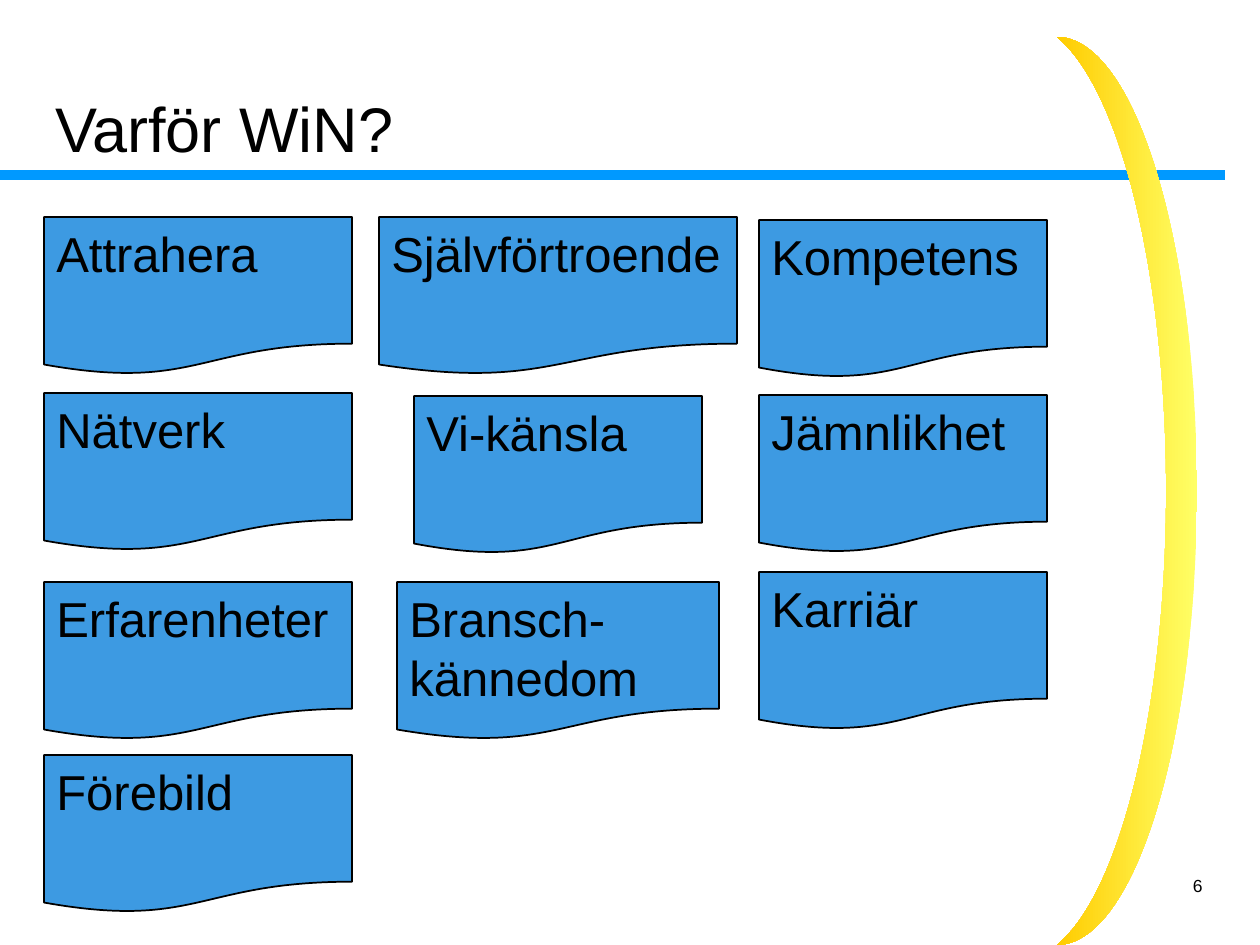
from pptx import Presentation
from pptx import util as u
from pptx.dml.color import RGBColor
from pptx.enum import shapes, text
from pptx.oxml import ns, xmlchemy

BLACK = RGBColor(0x00, 0x00, 0x00)
RULE_BLUE = RGBColor(0x00, 0x99, 0xFF)
BOX_BLUE = RGBColor(0x3D, 0x9A, 0xE2)
YELLOW = RGBColor(0xFF, 0xFF, 0x66)
GOLD = RGBColor(0xFF, 0xCC, 0x00)

PX_PER_INCH = 126
BOX_HEIGHT = 158

COLUMNS = [
    (198, [("Attrahera", 217, 308), ("Nätverk", 393, 308),
           ("Erfarenheter", 582, 308), ("Förebild", 755, 308)]),
    (558, [("Självförtroende", 217, 358), ("Vi-känsla", 396, 288),
           ("Bransch-\vkännedom", 582, 322)]),
    (903, [("Kompetens", 220, 288), ("Jämnlikhet", 395, 288),
           ("Karriär", 572, 288)]),
]


def px(*lengths):
    """Convert pixel lengths to EMU."""
    return [u.Inches(length / PX_PER_INCH) for length in lengths]


def write(frame, words, size, align=text.PP_ALIGN.LEFT):
    """Fill a text frame with one uniformly formatted paragraph."""
    frame.text = words
    paragraph = frame.paragraphs[0]
    paragraph.alignment = align
    paragraph.font.size = u.Pt(size)
    paragraph.font.name = "Arial"
    paragraph.font.color.rgb = BLACK
    return paragraph


def add_rule(slide):
    """Draw the blue rule under the title."""
    rule = slide.shapes.add_connector(
        shapes.MSO_CONNECTOR.STRAIGHT, *px(0, 175, 1225, 175))
    rule.line.color.rgb = RULE_BLUE
    rule.line.width = u.Pt(6)
    rule._element.spPr.append(xmlchemy.OxmlElement("a:effectLst"))


def add_page_number(slide, number):
    """Write the page number in the lower right corner."""
    box = slide.shapes.add_textbox(*px(1168, 869, 47, 33))
    box.text_frame.word_wrap = False
    write(box.text_frame, number, 10, text.PP_ALIGN.RIGHT)


def add_crescent(slide):
    """Draw the golden crescent, mirrored to bulge to the right."""
    crescent = slide.shapes.add_shape(
        shapes.MSO_SHAPE.MOON, *px(1057, 37, 140, 908))
    crescent.adjustments[0] = 0.22
    crescent.shadow.inherit = False
    crescent._element.spPr.find(ns.qn("a:xfrm")).set("flipH", "1")
    crescent.line.fill.background()
    crescent.fill.gradient()
    crescent.fill.gradient_angle = 0
    for stop, color, position in zip(
            crescent.fill.gradient_stops, (YELLOW, GOLD), (0, 1)):
        stop.color.rgb = color
        stop.position = position


def set_title(slide, words):
    """Place and format the title placeholder."""
    title = slide.shapes.title
    title.left, title.top, title.width, title.height = px(55, 32, 920, 133)
    frame = title.text_frame
    frame.margin_left = frame.margin_right = 0
    frame.margin_top = frame.margin_bottom = 0
    frame.vertical_anchor = text.MSO_ANCHOR.BOTTOM
    write(frame, words, 36).line_spacing = u.Pt(36)


def add_reason(slide, words, center, top, width):
    """Draw one reason as a document shape centred on its column."""
    reason = slide.shapes.add_shape(
        shapes.MSO_SHAPE.FLOWCHART_DOCUMENT,
        *px(center - width // 2, top, width, BOX_HEIGHT))
    reason.shadow.inherit = False
    reason.fill.solid()
    reason.fill.fore_color.rgb = BOX_BLUE
    reason.line.color.rgb = BLACK
    reason.line.width = u.Pt(1)
    reason.text_frame.vertical_anchor = text.MSO_ANCHOR.TOP
    write(reason.text_frame, words, 28)


def main():
    """Build and save the slide."""
    deck = Presentation()
    deck.slide_width, deck.slide_height = u.Inches(10), u.Inches(7.5)
    slide = deck.slides.add_slide(deck.slide_layouts[5])
    add_rule(slide)
    add_page_number(slide, "6")
    add_crescent(slide)
    set_title(slide, "Varför WiN?")
    for center, reasons in COLUMNS:
        for words, top, width in reasons:
            add_reason(slide, words, center, top, width)
    deck.save("out.pptx")


if __name__ == "__main__":
    main()
